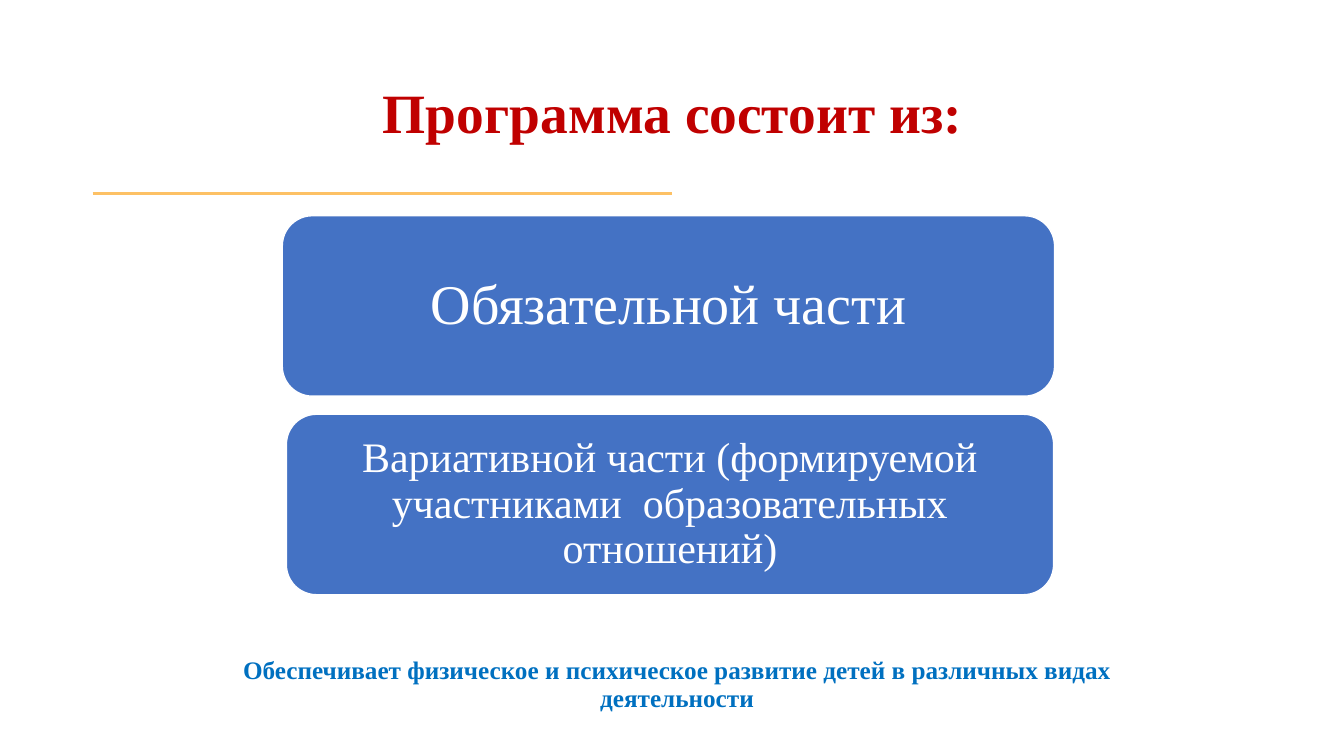
from pptx import Presentation
from pptx.dml.color import RGBColor
from pptx.enum.shapes import MSO_CONNECTOR, MSO_SHAPE
from pptx.enum.text import MSO_ANCHOR, PP_ALIGN
from pptx.oxml.ns import qn
from pptx.util import Inches, Pt

FONT = "Times New Roman"


def rgb(color):
    return RGBColor.from_string(color)


def write(tf, text, size, color, bold=False, spacing=0.9):
    tf.word_wrap = True
    p = tf.paragraphs[0]
    p.alignment = PP_ALIGN.CENTER
    p.line_spacing = spacing
    r = p.add_run()
    r.text = text
    r.font.name = FONT
    r.font.size = Pt(size)
    r.font.bold = bold
    r.font.color.rgb = rgb(color)


def add_rule(s, left, right, y, color, width):
    line = s.shapes.add_connector(MSO_CONNECTOR.STRAIGHT, Inches(left), Inches(y),
                                  Inches(right), Inches(y))
    line.line.color.rgb = rgb(color)
    line.line.width = Pt(width)
    sp_pr = line._element.spPr
    sp_pr.append(sp_pr.makeelement(qn("a:effectLst"), {}))


def add_title(s, text):
    sp = s.shapes.add_textbox(Inches(0.92), Inches(0.77), Inches(11.5), Inches(0.75))
    sp.text_frame.vertical_anchor = MSO_ANCHOR.MIDDLE
    write(sp.text_frame, text, 39.6, "C00000", bold=True)


def add_part(s, left, top, width, text, size, inset):
    sp = s.shapes.add_shape(MSO_SHAPE.ROUNDED_RECTANGLE, Inches(left), Inches(top),
                            Inches(width), Inches(1.79))
    sp.shadow.inherit = False
    sp.fill.solid()
    sp.fill.fore_color.rgb = rgb("4472C4")
    sp.line.color.rgb = rgb("FFFFFF")
    sp.line.width = Pt(1)
    tf = sp.text_frame
    tf.vertical_anchor = MSO_ANCHOR.MIDDLE
    tf.margin_left = tf.margin_right = tf.margin_top = tf.margin_bottom = Inches(inset)
    write(tf, text, size, "FFFFFF")


def add_summary(s, text):
    table = s.shapes.add_table(1, 1, Inches(2.27), Inches(6.47),
                               Inches(8.89), Inches(0.41)).table
    cell = table.cell(0, 0)
    cell.fill.background()
    write(cell.text_frame, text, 18, "0070C0", bold=True, spacing=1.0)


def main():
    prs = Presentation()
    prs.slide_width, prs.slide_height = Inches(13.33), Inches(7.5)
    s = prs.slides.add_slide(prs.slide_layouts[6])
    add_rule(s, 0.92, 6.67, 1.92, "FDC165", 2.5)
    add_title(s, "Программа состоит из:")
    add_part(s, 2.8, 2.14, 7.66, "Обязательной части", 40, 0.17)
    add_part(s, 2.84, 4.11, 7.61,
             "Вариативной части (формируемой участниками  образовательных отношений)",
             30, 0.12)
    add_summary(s, "Обеспечивает физическое и психическое развитие детей "
                   "в различных видах деятельности")
    prs.save("out.pptx")


if __name__ == "__main__":
    main()
